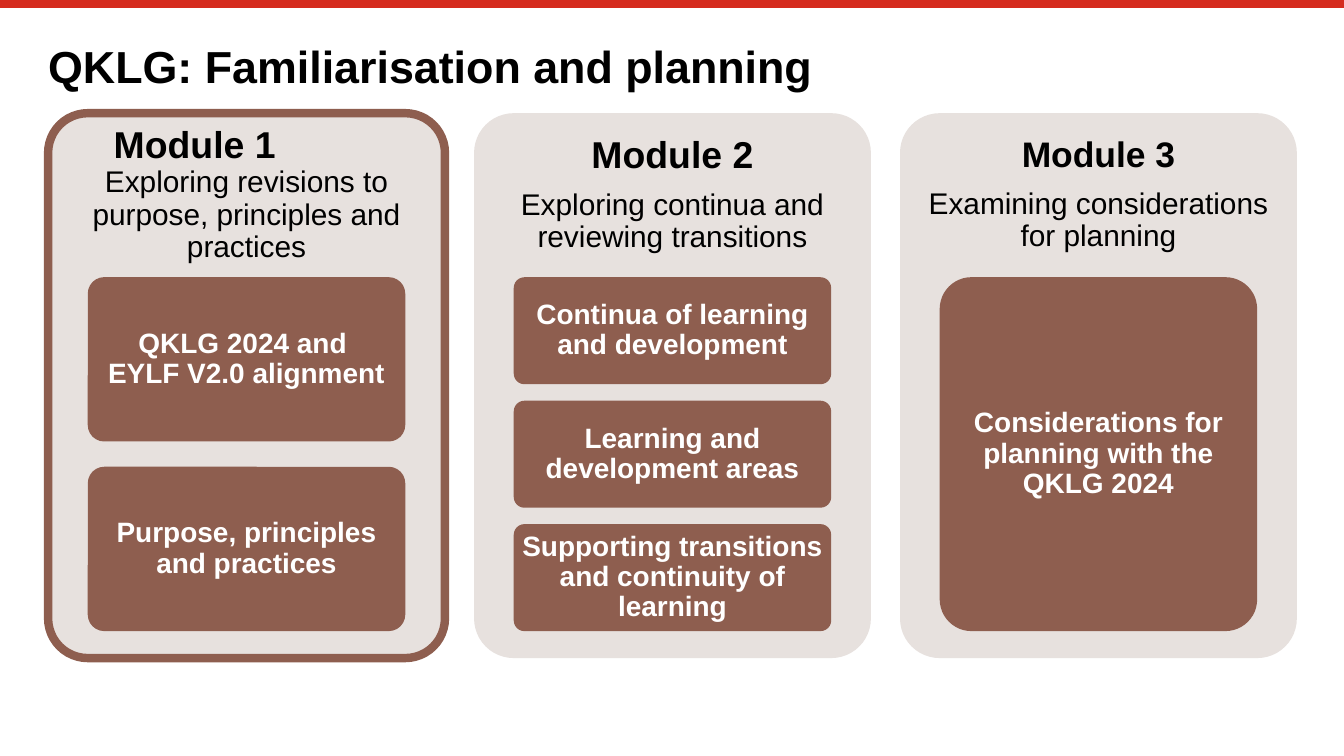
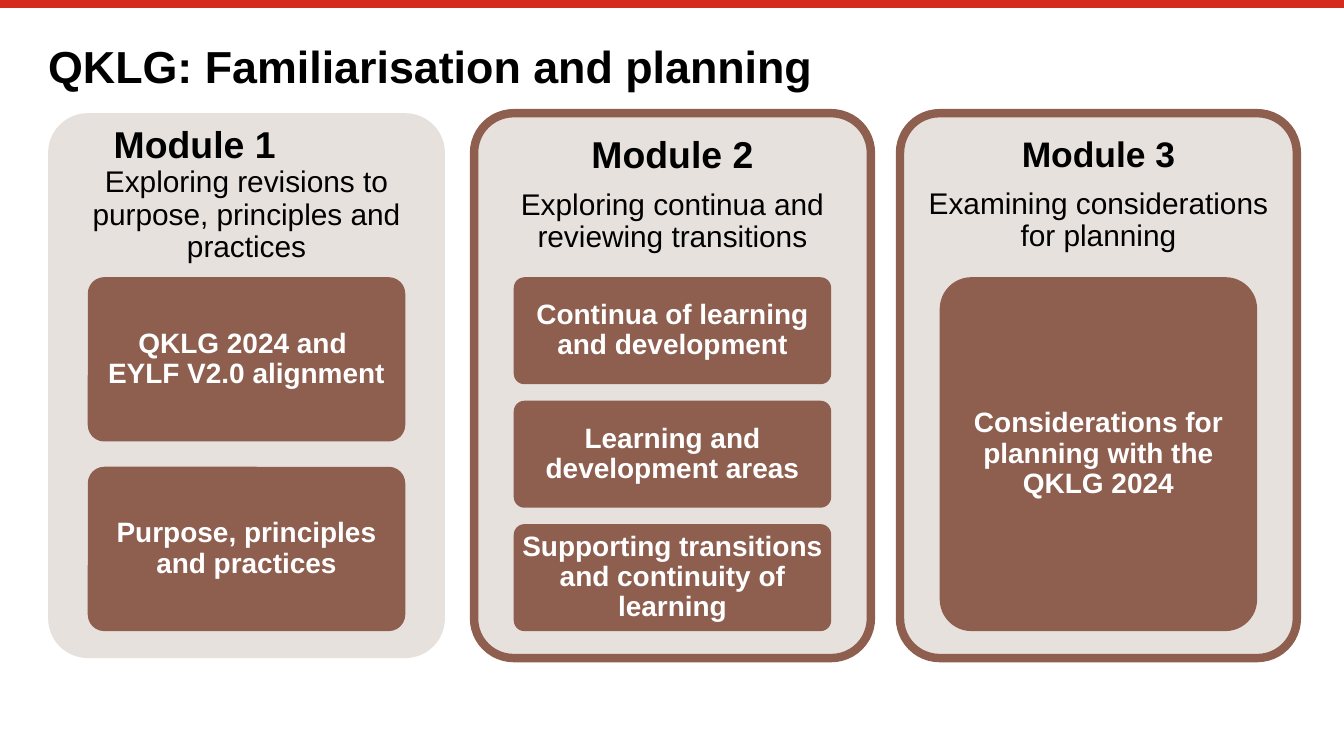
from dataclasses import dataclass

from lxml import etree
from pptx import Presentation
from pptx.dml.color import RGBColor
from pptx.enum.shapes import MSO_CONNECTOR, MSO_SHAPE
from pptx.enum.text import MSO_ANCHOR, PP_ALIGN
from pptx.oxml.ns import qn
from pptx.slide import Slide
from pptx.text.text import TextFrame
from pptx.util import Cm, Pt

ROUNDED = MSO_SHAPE.ROUNDED_RECTANGLE
STRAIGHT = MSO_CONNECTOR.STRAIGHT
MIDDLE, BOTTOM = MSO_ANCHOR.MIDDLE, MSO_ANCHOR.BOTTOM
LEFT, CENTER = PP_ALIGN.LEFT, PP_ALIGN.CENTER

COLORS = {
    "band": "D52B1E",
    "panel": "E7E1DE",
    "tile": "8E5E4F",
    "text": "000000",
    "tile_text": "FFFFFF",
}
FONT = "Arial"
TITLE = "QKLG: Familiarisation and planning"

# Layout in centimetres
PAGE_WIDTH, PAGE_HEIGHT = 25.4, 14.29
MARGIN = 0.91
PANEL_TOP, PANEL_WIDTH, PANEL_HEIGHT = 2.14, 7.5, 10.3
PANEL_PITCH = 8.05
HEADER_HEIGHT = 3.1
TILE_INSET, TILE_WIDTH = 0.75, 6.0
TILES_TOP, TILES_HEIGHT = 5.24, 6.69
TILE_GAP_RATIO = 2 / 13  # gap as a share of the tile height


@dataclass(frozen=True)
class Module:
    name: str
    summary: str
    tiles: tuple[str, ...]
    name_size: int = 20
    name_indent: float = 0  # centimetres; when set, the name is left-aligned


MODULES = (
    Module(
        "Module 1",
        "Exploring revisions to purpose, principles and practices",
        ("QKLG 2024 and \vEYLF V2.0 alignment", "Purpose, principles and practices"),
        name_indent=1.04,
    ),
    Module(
        "Module 2",
        "Exploring continua and reviewing transitions",
        (
            "Continua of learning and development",
            "Learning and development areas",
            "Supporting transitions and continuity of learning",
        ),
    ),
    Module(
        "Module 3",
        "Examining considerations for planning",
        ("Considerations for planning with the QKLG 2024",),
        name_size=19,
    ),
)
# Modules outlined on each slide
HIGHLIGHTS = (("Module 1",), ("Module 2", "Module 3"))


def color(name: str) -> RGBColor:
    return RGBColor.from_string(COLORS[name])


def set_frame(frame: TextFrame, inset_x: float, inset_y: float, anchor: MSO_ANCHOR) -> None:
    frame.word_wrap = True
    frame.vertical_anchor = anchor
    frame.margin_left = frame.margin_right = Cm(inset_x)
    frame.margin_top = frame.margin_bottom = Cm(inset_y)


def format_paragraph(para, size: int, shade: str, bold: bool, align: PP_ALIGN) -> None:
    para.alignment = align
    para.line_spacing = 0.9
    para.space_before = Pt(0)
    for span in para.runs:
        span.font.name = FONT
        span.font.size = Pt(size)
        span.font.bold = bold
        span.font.color.rgb = color(shade)


def add_band(page: Slide) -> None:
    band = page.shapes.add_connector(STRAIGHT, 0, Cm(0.08), Cm(PAGE_WIDTH), Cm(0.08))
    band.line.color.rgb = color("band")
    band.line.width = Pt(4.2)
    etree.SubElement(band._element.spPr, qn("a:effectLst"))


def set_title(page: Slide) -> None:
    title = page.shapes.title
    title.left, title.top = Cm(MARGIN), Cm(0.76)
    title.width, title.height = Cm(23.6), Cm(1)
    title.text_frame.text = TITLE
    set_frame(title.text_frame, 0, 0, BOTTOM)
    format_paragraph(title.text_frame.paragraphs[0], 24, "text", True, LEFT)


def add_rounded(page: Slide, left: float, top: float, width: float, height: float, fill: str):
    box = page.shapes.add_shape(ROUNDED, Cm(left), Cm(top), Cm(width), Cm(height))
    box.adjustments[0] = 0.1
    box.shadow.inherit = False
    box.fill.solid()
    box.fill.fore_color.rgb = color(fill)
    box.line.fill.background()
    return box


def add_header(page: Slide, module: Module, left: float) -> None:
    box = page.shapes.add_textbox(Cm(left), Cm(PANEL_TOP), Cm(PANEL_WIDTH), Cm(HEADER_HEIGHT))
    frame = box.text_frame
    set_frame(frame, 0.2, 0.2, MIDDLE)
    name, summary = frame.paragraphs[0], frame.add_paragraph()
    name.text, summary.text = module.name, module.summary
    format_paragraph(name, module.name_size, "text", True, LEFT if module.name_indent else CENTER)
    format_paragraph(summary, 16, "text", False, CENTER)
    if module.name_indent:
        name._p.get_or_add_pPr().set("marL", str(Cm(module.name_indent)))
    else:
        name.space_after = Pt(7)


def add_tiles(page: Slide, module: Module, left: float) -> None:
    count = len(module.tiles)
    height = TILES_HEIGHT / (count + (count - 1) * TILE_GAP_RATIO)
    for row, label in enumerate(module.tiles):
        top = TILES_TOP + row * height * (1 + TILE_GAP_RATIO)
        tile = add_rounded(page, left, top, TILE_WIDTH, height, "tile")
        tile.text_frame.text = label
        set_frame(tile.text_frame, 0.1, 0.08, MIDDLE)
        format_paragraph(tile.text_frame.paragraphs[0], 15, "tile_text", True, CENTER)


def add_module(page: Slide, module: Module, left: float, highlighted: bool) -> None:
    panel = add_rounded(page, left, PANEL_TOP, PANEL_WIDTH, PANEL_HEIGHT, "panel")
    if highlighted:
        panel.line.color.rgb = color("tile")
        panel.line.width = Pt(4.5)
    add_header(page, module, left)
    add_tiles(page, module, left + TILE_INSET)


def main() -> None:
    deck = Presentation()
    deck.slide_width, deck.slide_height = Cm(PAGE_WIDTH), Cm(PAGE_HEIGHT)
    title_only = deck.slide_layouts[5]
    for highlighted in HIGHLIGHTS:
        page = deck.slides.add_slide(title_only)
        add_band(page)
        set_title(page)
        for column, module in enumerate(MODULES):
            add_module(page, module, MARGIN + column * PANEL_PITCH, module.name in highlighted)
    deck.save("out.pptx")


if __name__ == "__main__":
    main()
